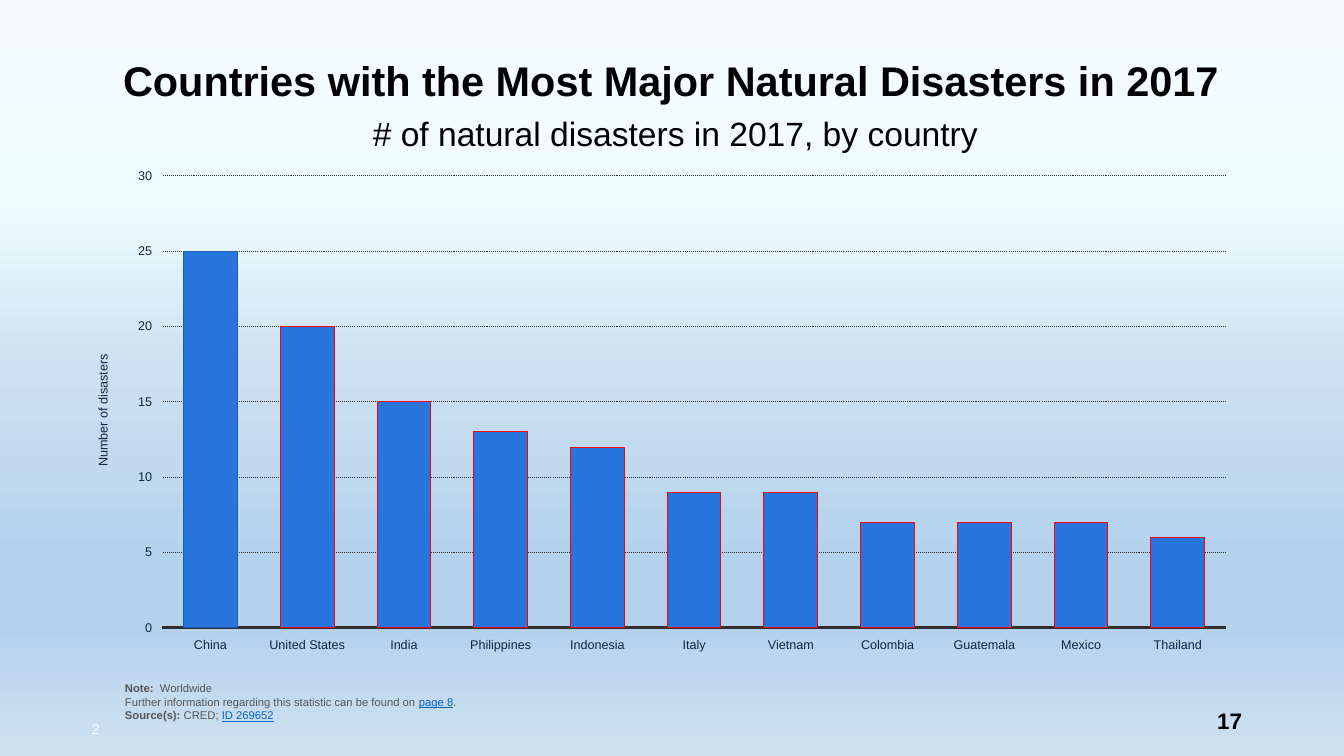
from lxml.etree import SubElement
from pptx import Presentation
from pptx.chart.data import CategoryChartData
from pptx.dml.color import RGBColor
from pptx.enum.chart import XL_CHART_TYPE, XL_TICK_LABEL_POSITION, XL_TICK_MARK
from pptx.enum.dml import MSO_LINE
from pptx.enum.text import MSO_ANCHOR, PP_ALIGN
from pptx.oxml import parse_xml
from pptx.oxml.ns import nsdecls, qn
from pptx.util import Cm, Pt

BLACK = RGBColor(0x00, 0x00, 0x00)
WHITE = RGBColor(0xFF, 0xFF, 0xFF)
GREY = RGBColor(0x55, 0x55, 0x55)
LINK = RGBColor(0x05, 0x63, 0xC1)
NAVY = RGBColor(0x0F, 0x28, 0x3E)
DARK = RGBColor(0x2F, 0x2F, 0x2F)
BLUE = RGBColor(0x28, 0x75, 0xDD)
EDGE = RGBColor(0x1F, 0x5C, 0xAE)
RED = RGBColor(0xFF, 0x00, 0x00)

SKY = [
    (0, RGBColor(0xF7, 0xFA, 0xFD)),
    (27, RGBColor(0xEF, 0xFC, 0xFF)),
    (49, RGBColor(0xCB, 0xE0, 0xF2)),
    (74, RGBColor(0xB5, 0xD2, 0xEC)),
    (83, RGBColor(0xB5, 0xD2, 0xEC)),
    (100, RGBColor(0xCE, 0xE1, 0xF2)),
]
COUNTS = {
    "China": 25, "United States": 20, "India": 15, "Philippines": 13,
    "Indonesia": 12, "Italy": 9, "Vietnam": 9, "Colombia": 7,
    "Guatemala": 7, "Mexico": 7, "Thailand": 6,
}
NOTES = [
    [("Note: ", "bold"), (" Worldwide", "")],
    [("Further information regarding this statistic can be found on ", "bold off"),
     ("page 8", "link"), (".", "")],
    [("Source(s): ", "bold"), ("CRED; ", ""), ("ID 269652", "link")],
]
NOTES[1][0] = (NOTES[1][0][0], "")


class Deck:
    """Holds the style and the current slide, and adds each kind of element."""

    face = "Arial"

    def __init__(self):
        self.show = Presentation()
        self.show.slide_width, self.show.slide_height = Cm(33.87), Cm(19.05)
        self.slide = self.show.slides.add_slide(self.show.slide_layouts[6])

    def style(self, font, size, color, bold=False):
        font.name, font.size, font.bold = self.face, Pt(size), bold
        font.color.rgb = color

    def sky(self, stops):
        self.slide.background.fill.gradient()
        grad = next(self.slide.element.iter(qn("a:gradFill")))
        grad.find(qn("a:lin")).set("ang", "5400000")
        items = grad.find(qn("a:gsLst"))
        for old in list(items):
            items.remove(old)
        for pos, color in stops:
            stop = SubElement(items, qn("a:gs"), pos=str(pos * 1000))
            SubElement(stop, qn("a:srgbClr"), val=str(color))

    def text(self, box, rows, size, color, bold=False,
             align=PP_ALIGN.LEFT, anchor=MSO_ANCHOR.TOP):
        frame = self.slide.shapes.add_textbox(*map(Cm, box)).text_frame
        frame.word_wrap, frame.vertical_anchor = True, anchor
        for i, row in enumerate(rows):
            para = frame.add_paragraph() if i else frame.paragraphs[0]
            para.alignment = align
            self.style(para.font, size, color, bold)
            for words, kind in row:
                run = para.add_run()
                run.text = words
                if kind == "bold":
                    run.font.bold = True
                elif kind == "link":
                    run.font.underline = True
                    run.font.color.rgb = LINK

    def line(self, words, box, size, color, **look):
        self.text(box, [[(words, "")]], size, color, **look)

    def axis(self, axis):
        axis.major_tick_mark = axis.minor_tick_mark = XL_TICK_MARK.NONE
        axis.tick_label_position = XL_TICK_LABEL_POSITION.LOW
        self.style(axis.tick_labels.font, 9, NAVY)

    def place(self, chart, **area):
        plot = next(chart.element.iter(qn("c:plotArea")))
        for old in plot.findall(qn("c:layout")):
            plot.remove(old)
        layout = parse_xml(f"<c:layout {nsdecls('c')}/>")
        manual = SubElement(layout, qn("c:manualLayout"))
        SubElement(manual, qn("c:layoutTarget"), val="inner")
        for side in "xy":
            SubElement(manual, qn(f"c:{side}Mode"), val="edge")
        for name, val in area.items():
            SubElement(manual, qn(f"c:{name}"), val=str(val))
        plot.insert(0, layout)

    def chart(self, box, counts, label):
        data = CategoryChartData()
        data.categories = list(counts)
        data.add_series("Series 1", list(counts.values()))
        chart = self.slide.shapes.add_chart(
            XL_CHART_TYPE.COLUMN_STACKED, *map(Cm, box), data).chart
        chart.has_legend = chart.has_title = False
        self.style(chart.font, 9, NAVY)
        self.place(chart, x=0.0745, y=0.035, w=0.906, h=0.897)

        plot = chart.plots[0]
        plot.gap_width, plot.overlap = 80, 100
        plot.vary_by_categories = False
        bars = plot.series[0]
        first = bars.points[0]
        for part, edge in ((bars, RED), (first, EDGE)):
            part.format.fill.solid()
            part.format.fill.fore_color.rgb = BLUE
            part.format.line.color.rgb = edge
            part.format.line.width = Pt(0.75)

        base, scale = chart.category_axis, chart.value_axis
        self.axis(base)
        base.format.line.color.rgb, base.format.line.width = DARK, Pt(2)
        self.axis(scale)
        scale.format.line.fill.background()
        scale.minimum_scale, scale.maximum_scale, scale.major_unit = 0, 30, 5
        grid = scale.major_gridlines.format.line
        grid.color.rgb, grid.width = DARK, Pt(0.75)
        grid.dash_style = MSO_LINE.ROUND_DOT
        frame = scale.axis_title.text_frame
        frame.text = label
        self.style(frame.paragraphs[0].font, 9, NAVY)


def main():
    deck = Deck()
    deck.sky(SKY)
    deck.line("Countries with the Most Major Natural Disasters in 2017",
              (1.88, 1.12, 30.1, 1.65), 29.6, BLACK, bold=True,
              align=PP_ALIGN.CENTER, anchor=MSO_ANCHOR.BOTTOM)
    deck.line("# of natural disasters in 2017, by country",
              (1.97, 2.72, 30.1, 0.91), 24, BLACK, align=PP_ALIGN.CENTER)
    deck.text((2.9, 16.64, 23, 1.68), NOTES, 8, GREY, anchor=MSO_ANCHOR.BOTTOM)
    deck.chart((1.88, 3.99, 29.6, 12.7), COUNTS, "Number of disasters")
    deck.line("2", (1.78, 18.03, 1.27, 0.69), 10, WHITE, align=PP_ALIGN.CENTER)
    deck.line("17", (23.93, 17.65, 7.62, 1.02), 16, BLACK, bold=True,
              align=PP_ALIGN.RIGHT, anchor=MSO_ANCHOR.MIDDLE)
    deck.show.save("out.pptx")


if __name__ == "__main__":
    main()
